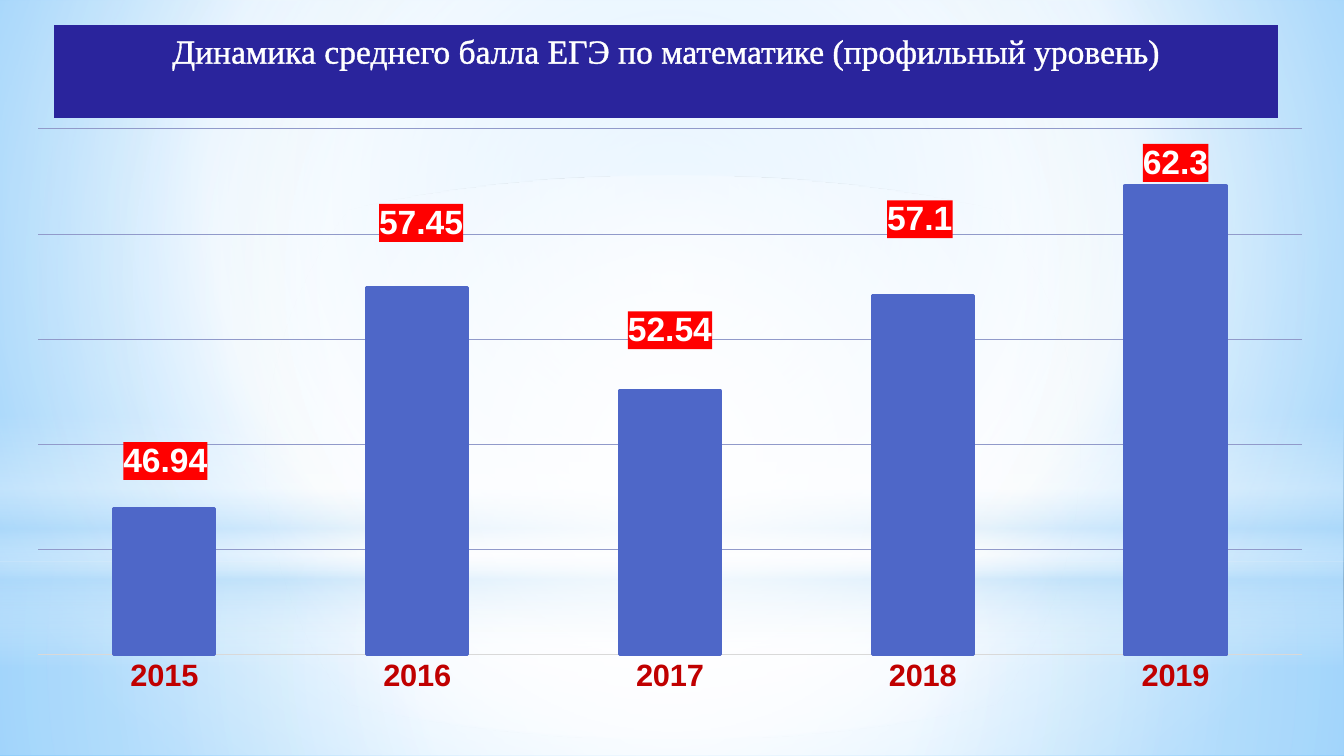
from dataclasses import dataclass

from lxml.etree import SubElement
from pptx import Presentation
from pptx.chart.data import CategoryChartData
from pptx.dml.color import RGBColor
from pptx.enum.chart import XL_CHART_TYPE, XL_LABEL_POSITION, XL_TICK_LABEL_POSITION, XL_TICK_MARK
from pptx.enum.shapes import MSO_SHAPE
from pptx.enum.text import MSO_ANCHOR, PP_ALIGN
from pptx.oxml import parse_xml
from pptx.oxml.ns import nsdecls, qn
from pptx.util import Emu, Pt


@dataclass(frozen=True)
class Theme:
    navy: str = "2A249C"
    white: str = "FFFFFF"
    haze: str = "B4DCFA"
    sky: str = "9ED5FF"
    deep: str = "5BB9FF"
    bar: str = "4E67C8"
    grid: str = "919ACA"
    base: str = "D9D9D9"
    year: str = "C00000"
    tag: str = "FF0000"
    black: str = "000000"
    serif: str = "Times New Roman"
    sans: str = "Arial"
    big: int = 24
    mid: int = 22
    small: int = 10


T = Theme()
WIDE, HIGH = 1344, 756
MIDDLE = (50, 50, 50, 50)
# Year, score, and the shift in px of its tag from the usual place above the bar
RESULTS = (
    ("2015", 46.94, (1, -25)),
    ("2016", 57.45, (4, -42)),
    ("2017", 52.54, (0, -38)),
    ("2018", 57.1, (-3, -53)),
    ("2019", 62.3, (0, 0)),
)
YEARS, SCORES, SHIFTS = zip(*RESULTS)


def px(n):
    return Emu(round(n * 914400 / 100.8))


def rgb(code):
    return RGBColor.from_string(code)


def style(font, size, color, face, bold=False):
    font.size, font.name, font.bold = Pt(size), face, bold
    font.color.rgb = rgb(color)


def paint(fill, color):
    fill.solid()
    fill.fore_color.rgb = rgb(color)


def stroke(line, color, width):
    line.color.rgb = rgb(color)
    line.width = Pt(width)


def solid(color):
    return f'<a:solidFill><a:srgbClr val="{color}"/></a:solidFill>'


def blend(fill, host, stops, focus=None):
    """Fill with (position, colour, opacity) stops: round a focus, or top to bottom."""
    fill.gradient()
    grad = host.find(".//" + qn("a:gradFill"))
    for part in list(grad):
        grad.remove(part)
    ramp = SubElement(grad, qn("a:gsLst"))
    for pos, color, alpha in stops:
        stop = SubElement(ramp, qn("a:gs"), pos=str(pos * 1000))
        tint = SubElement(stop, qn("a:srgbClr"), val=color)
        if alpha < 100:
            SubElement(tint, qn("a:alpha"), val=str(alpha * 1000))
    if focus:
        round_ = SubElement(grad, qn("a:path"), path="circle")
        sides = {side: str(n * 1000) for side, n in zip("ltrb", focus)}
        SubElement(round_, qn("a:fillToRect"), **sides)
    else:
        SubElement(grad, qn("a:lin"), ang="5400000", scaled="0")


def block(slide, box, kind=MSO_SHAPE.RECTANGLE):
    shape = slide.shapes.add_shape(kind, *map(px, box))
    shape.shadow.inherit = False
    shape.line.fill.background()
    return shape


def write(shape, text, *, size, color, face, align, edge):
    """Put one line of text, outlined edge points wide, at the top of a shape."""
    frame = shape.text_frame
    frame.word_wrap = True
    frame.vertical_anchor = MSO_ANCHOR.TOP
    frame.margin_top = px(5)
    line = frame.paragraphs[0]
    line.alignment = align
    run = line.add_run()
    run.text = text
    style(run.font, size, color, face)
    form = shape.element.find(".//" + qn("a:rPr"))
    form.insert(0, parse_xml(
        f'<a:ln {nsdecls("a")} w="{Pt(edge)}">{solid(color)}</a:ln>'))


def layout(**parts):
    """Build a manual chart layout; its parts keep their order."""
    inner = "".join(f'<c:{name} val="{value}"/>' for name, value in parts.items())
    return parse_xml(f'<c:layout {nsdecls("c")}><c:manualLayout>{inner}'
                     '</c:manualLayout></c:layout>')


def scene(slide):
    blend(slide.background.fill, slide.element,
          ((0, T.sky, 100), (60, T.white, 100), (100, T.deep, 100)), (20, 10, 20, 60))
    split = 562
    rect, oval = MSO_SHAPE.RECTANGLE, MSO_SHAPE.OVAL
    floor = ((0, T.white, 91), (37, T.white, 76), (100, T.haze, 79))
    wall = ((0, T.white, 89), (48, T.white, 62), (100, T.haze, 79))
    band = ((0, T.white, 0), (29, T.white, 30), (45, T.haze, 40),
            (55, T.white, 26), (65, T.haze, 60), (100, T.white, 0))
    glow = ((0, T.white, 100), (56, T.white, 0))
    for top, high, kind, stops, focus in (
            (split, HIGH - split, rect, floor, MIDDLE),
            (0, split, rect, wall, MIDDLE),
            (415, 252, rect, band, None),
            (176, split, oval, glow, MIDDLE)):
        shape = block(slide, (0, top, WIDE, high), kind)
        blend(shape.fill, shape.element, stops, focus)


def title(slide, box):
    shape = block(slide, box)
    paint(shape.fill, T.navy)
    write(shape, "Динамика среднего балла ЕГЭ по математике (профильный уровень)",
          size=T.big, color=T.white, face=T.serif, align=PP_ALIGN.CENTER, edge=1.45)


def axes(chart):
    years, marks = chart.category_axis, chart.value_axis
    years.major_tick_mark = years.minor_tick_mark = XL_TICK_MARK.NONE
    years.tick_label_position = XL_TICK_LABEL_POSITION.NEXT_TO_AXIS
    style(years.tick_labels.font, T.mid, T.year, T.sans, bold=True)
    stroke(years.format.line, T.base, 0.75)
    marks.minimum_scale, marks.maximum_scale, marks.major_unit = 40, 65, 5
    marks.major_tick_mark = marks.minor_tick_mark = XL_TICK_MARK.NONE
    marks.visible = False
    marks.has_major_gridlines = True
    stroke(marks.major_gridlines.format.line, T.grid, 0.75)


def tags(chart, series, wide, high):
    """Show each score on a red tag, shifted from the top of its bar."""
    series.data_labels.show_value = True
    points = [series.points[i].data_label for i in range(len(SCORES))]
    for label in (series.data_labels, *points):
        style(label.font, T.big, T.white, T.sans, bold=True)
        label.position = XL_LABEL_POSITION.OUTSIDE_END
    for node, (dx, dy) in zip(chart.element.iter(qn("c:dLbl")), SHIFTS):
        node.find(qn("c:idx")).addnext(layout(x=dx / wide, y=dy / high))
        node.find(qn("c:txPr")).addprevious(parse_xml(
            f'<c:spPr {nsdecls("c", "a")}>{solid(T.tag)}</c:spPr>'))
    for leader in chart.element.iter(qn("c:showLeaderLines")):
        leader.set("val", "0")


def scores(slide, box):
    wide, high = box[2:]
    data = CategoryChartData()
    data.categories = YEARS
    data.add_series("Series 1", SCORES)
    chart = slide.shapes.add_chart(
        XL_CHART_TYPE.COLUMN_CLUSTERED, *map(px, box), data).chart
    chart.has_title = chart.has_legend = False
    style(chart.font, T.small, T.black, T.sans)

    area = chart.element.find(".//" + qn("c:plotArea"))
    for old in area.findall(qn("c:layout")):
        area.remove(old)
    area.insert(0, layout(layoutTarget="inner", xMode="edge", yMode="edge",
                          x=27 / wide, y=11 / high, w=1264 / wide, h=526 / high))
    axes(chart)

    plot = chart.plots[0]
    plot.gap_width = 150
    plot.vary_by_categories = False
    series = plot.series[0]
    paint(series.format.fill, T.bar)
    stroke(series.format.line, T.bar, 2.25)
    tags(chart, series, wide, high)


def main():
    deck = Presentation()
    deck.slide_width, deck.slide_height = px(WIDE), px(HIGH)
    slide = deck.slides.add_slide(deck.slide_layouts[6])
    scene(slide)
    title(slide, (54, 25, 1224, 93))
    scores(slide, (11, 118, 1317, 586))
    deck.save("out.pptx")


if __name__ == "__main__":
    main()
